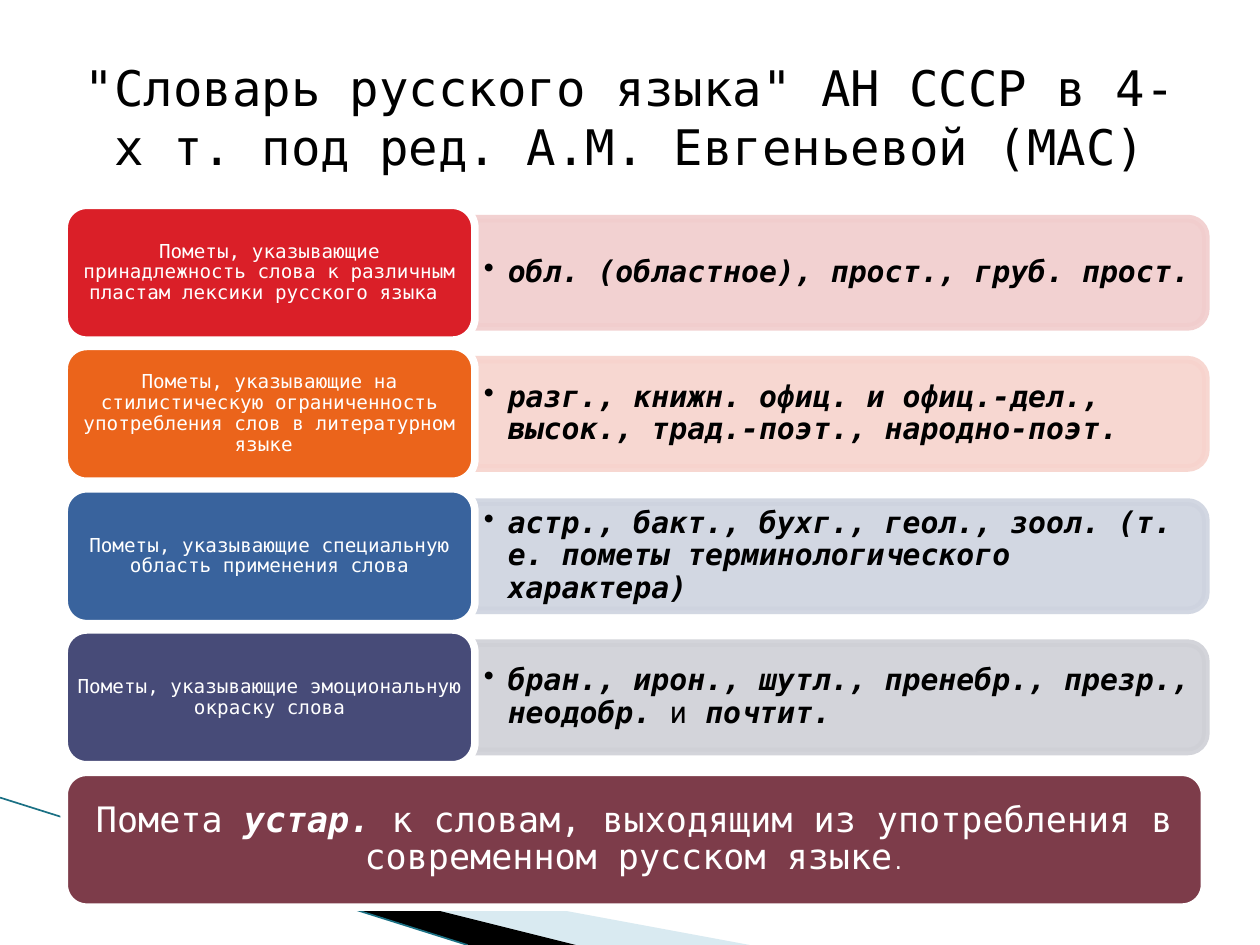
from dataclasses import dataclass

from lxml.etree import SubElement
from pptx import Presentation
from pptx.dml.color import RGBColor
from pptx.enum.shapes import MSO_CONNECTOR, MSO_SHAPE as Shape
from pptx.enum.text import MSO_ANCHOR as Anchor, PP_ALIGN as Align
from pptx.oxml.ns import qn
from pptx.util import Pt

PX = 9144  # EMU in one px, 100 px to the inch


@dataclass(frozen=True)
class Theme:
    font: str = "DejaVu Sans Mono"
    ink: str = "000000"
    paper: str = "FFFFFF"
    swoosh: str = "A0CBDC"
    swoosh_line: str = "1A7084"
    red: str = "DA1F28"
    red_tint: str = "F1CDCD"
    orange: str = "EB641B"
    orange_tint: str = "F7D3CD"
    blue: str = "39639D"
    blue_tint: str = "CED3DF"
    indigo: str = "474B78"
    indigo_tint: str = "CFD0D6"
    maroon: str = "7D3C4A"
    title_size: int = 28
    note_size: int = 20
    label_size: int = 17
    card_size: int = 11
    border: float = 4.33


@dataclass(frozen=True)
class Span:
    text: str
    strong: bool = False
    size: int | None = None


@dataclass(frozen=True)
class Row:
    group: str
    labels: list[Span]
    color: str
    tint: str


THEME = Theme()
ROWS = [
    Row("Пометы, указывающие принадлежность слова к различным пластам лексики русского языка ",
        [Span("обл. (областное), прост., груб. прост.", True)],
        THEME.red, THEME.red_tint),
    Row("Пометы, указывающие на стилистическую ограниченность употребления слов "
        "в литературном языке ",
        [Span("разг., книжн. офиц. и офиц.-дел., высок., трад.-поэт., народно-поэт.", True)],
        THEME.orange, THEME.orange_tint),
    Row("Пометы, указывающие специальную область применения слова",
        [Span("астр., бакт., бухг., геол., зоол. (т. е. пометы терминологического характера) ",
              True)],
        THEME.blue, THEME.blue_tint),
    Row("Пометы, указывающие эмоциональную окраску слова",
        [Span("бран., ирон., шутл., пренебр., презр., неодобр.", True),
         Span(" и "), Span("почтит.", True)],
        THEME.indigo, THEME.indigo_tint),
]
NOTE = [
    Span("Помета "), Span("устар.", True),
    Span(" к словам, выходящим из употребления в современном русском языке"),
    Span(".", size=THEME.card_size),
]
TITLE = '"Словарь русского языка" АН СССР в 4-х т. под ред. А.М. Евгеньевой (МАС)'

# Grid of the list, in px
LEFT, TOP, CARD_WIDTH, CARD_HEIGHT = 51, 163, 326, 107
NOTE_WIDTH = 905
BAR_LEFT, BAR_WIDTH, BAR_HEIGHT = 377, 580, 86
LABEL_WIDTH, LABEL_HEIGHT = 575, 77


def px(*lengths: float) -> list[int]:
    return [round(length * PX) for length in lengths]


def row_top(index: int) -> int:
    return TOP + index * 225 // 2


def set_text(box, spans: list[Span], *, size: int, color: str, insets: tuple[int, int],
             align=Align.CENTER, spacing: float = 0.9, bullet: bool = False) -> None:
    frame = box.text_frame
    frame.word_wrap = True
    frame.vertical_anchor = Anchor.MIDDLE
    frame.margin_left = frame.margin_right = insets[0] * PX
    frame.margin_top = frame.margin_bottom = insets[1] * PX
    para = frame.paragraphs[0]
    para.alignment = align
    para.line_spacing = spacing
    if bullet:
        props = para._p.get_or_add_pPr()
        props.set("marL", str(19 * PX))
        props.set("indent", str(-19 * PX))
        SubElement(props, qn("a:buChar"), char="•")
    for span in spans:
        run = para.add_run()
        run.text = span.text
        run.font.name = THEME.font
        run.font.size = Pt(span.size or size)
        run.font.bold = run.font.italic = span.strong
        run.font.color.rgb = RGBColor.from_string(color)


def paint(shape, fill: str, line: str | None = None, opacity: int = 100) -> None:
    shape.shadow.inherit = False
    shape.fill.solid()
    shape.fill.fore_color.rgb = RGBColor.from_string(fill)
    if line:
        shape.line.color.rgb = RGBColor.from_string(line)
        shape.line.width = Pt(THEME.border)
    else:
        shape.line.fill.background()
    if opacity < 100:
        for color in shape._element.spPr.iter(qn("a:srgbClr")):
            SubElement(color, qn("a:alpha"), val=str(opacity * 1000))


def add_swoosh(page, points: list[tuple[int, int]], color: str, opacity: int = 100) -> None:
    builder = page.shapes.build_freeform(*points[0], scale=PX)
    builder.add_line_segments(points[1:], close=True)
    paint(builder.convert_to_shape(), color, opacity=opacity)


def add_swoosh_line(page) -> None:
    edge = page.shapes.add_connector(MSO_CONNECTOR.STRAIGHT, *px(0, 633, 371, 750))
    edge.line.color.rgb = RGBColor.from_string(THEME.swoosh_line)
    edge.line.width = Pt(0.95)
    SubElement(edge._element.spPr, qn("a:effectLst"))


def add_card(page, top: int, width: int, spans: list[Span], color: str, size: int,
             insets: tuple[int, int]) -> None:
    card = page.shapes.add_shape(Shape.ROUNDED_RECTANGLE, *px(LEFT, top, width, CARD_HEIGHT))
    paint(card, color, THEME.paper)
    set_text(card, spans, size=size, color=THEME.paper, insets=insets)


def add_bar(page, top: int, row: Row) -> None:
    # The rounded top pair of corners is turned to the right
    middle = top + CARD_HEIGHT / 2
    bar = page.shapes.add_shape(
        Shape.ROUND_2_SAME_RECTANGLE,
        *px(BAR_LEFT + (BAR_WIDTH - BAR_HEIGHT) / 2, middle - BAR_WIDTH / 2,
            BAR_HEIGHT, BAR_WIDTH))
    bar.rotation = 90
    paint(bar, row.tint, row.tint, opacity=90)
    label = page.shapes.add_textbox(
        *px(BAR_LEFT, middle - LABEL_HEIGHT / 2, LABEL_WIDTH, LABEL_HEIGHT))
    set_text(label, row.labels, size=THEME.label_size, color=THEME.ink, insets=(7, 4),
             align=Align.LEFT, bullet=True)


def main() -> None:
    deck = Presentation()
    deck.slide_width, deck.slide_height = px(1000, 750)
    page = deck.slides.add_slide(deck.slide_layouts[6])

    # Swooshes in the lower left corner
    add_swoosh(page, [(55, 650), (595, 750), (456, 750)], THEME.swoosh, opacity=40)
    add_swoosh(page, [(53, 649), (457, 750), (372, 750)], THEME.ink)
    add_swoosh_line(page)

    # Groups of labels and the closing note
    for index, row in enumerate(ROWS):
        add_bar(page, row_top(index), row)
        add_card(page, row_top(index), CARD_WIDTH, [Span(row.group)], row.color,
                 THEME.card_size, (5, 2))
    add_card(page, row_top(len(ROWS)), NOTE_WIDTH, NOTE, THEME.maroon, THEME.note_size, (8, 4))

    # Title
    title = page.shapes.add_textbox(*px(50, 30, 900, 125))
    set_text(title, [Span(TITLE)], size=THEME.title_size, color=THEME.ink,
             insets=(10, 5), spacing=1.0)

    deck.save("out.pptx")


if __name__ == "__main__":
    main()
